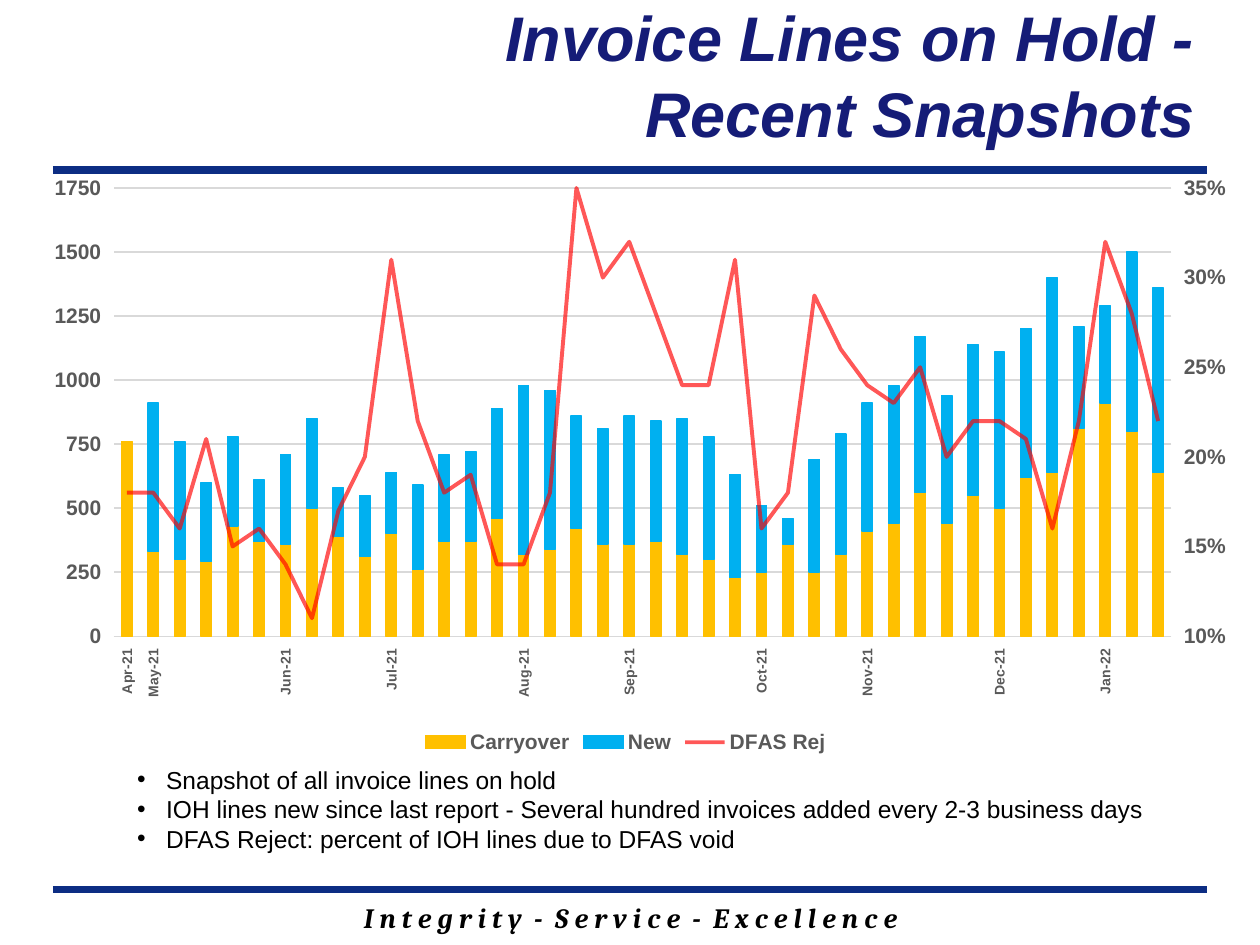
from copy import deepcopy

from lxml import etree
from pptx import Presentation, util as u
from pptx.chart.axis import CategoryAxis, ValueAxis
from pptx.chart.data import CategoryChartData
from pptx.dml.color import RGBColor
from pptx.enum import chart as ch, shapes, text
from pptx.oxml import parse_xml
from pptx.oxml.ns import nsdecls, qn

NAVY, GREY, PALE = "0C2D83", "595959", "D9D9D9"


def rgb(value):
    return RGBColor.from_string(value)


def style(font, size, color, name="Arial", bold=False, italic=False):
    font.size, font.name = u.Pt(size), name
    font.bold, font.italic = bold, italic
    font.color.rgb = rgb(color)


prs = Presentation()
prs.slide_width, prs.slide_height = u.Inches(10), u.Inches(7.5)
s = prs.slides.add_slide(prs.slide_layouts[6])

# Rules above and below the content
for y in (7.06, 1.35):
    rule = s.shapes.add_connector(shapes.MSO_CONNECTOR.STRAIGHT, u.Inches(0.42),
                                  u.Inches(y), u.Inches(9.58), u.Inches(y))
    rule.line.color.rgb = rgb(NAVY)
    rule.line.width = u.Pt(4.5)
    etree.SubElement(rule.element.spPr, qn("a:effectLst"))

# Motto
sp = s.shapes.add_textbox(u.Inches(0.42), u.Inches(7.1), u.Inches(9.17), u.Inches(0.37))
tf = sp.text_frame
tf.word_wrap = True
p = tf.paragraphs[0]
p.alignment = text.PP_ALIGN.CENTER
r = p.add_run()
r.text = "I n t e g r i t y  -  S e r v i c e  -  E x c e l l e n c e"
style(r.font, 16, "000000", "Cambria", True, True)

# Title
sp = s.shapes.add_textbox(u.Inches(3.69), u.Inches(0.16), u.Inches(5.89), u.Inches(1.08))
tf = sp.text_frame
tf.word_wrap = True
tf.vertical_anchor = text.MSO_ANCHOR.BOTTOM
p = tf.paragraphs[0]
p.alignment = text.PP_ALIGN.RIGHT
for i, line in enumerate(("Invoice Lines on Hold -", "Recent Snapshots")):
    if i:
        p.add_line_break()
    r = p.add_run()
    r.text = line
    style(r.font, 36, "151C77", bold=True, italic=True)

# Chart data: a label only on the first snapshot of each month
month_starts = {0: "Apr-21", 1: "May-21", 6: "Jun-21", 10: "Jul-21", 15: "Aug-21",
                19: "Sep-21", 24: "Oct-21", 28: "Nov-21", 33: "Dec-21", 37: "Jan-22"}
carryover = [760, 330, 300, 290, 430, 370, 360, 500, 390, 310,
             400, 260, 370, 370, 460, 320, 340, 420, 360, 360,
             370, 320, 300, 230, 250, 360, 250, 320, 410, 440,
             560, 440, 550, 500, 620, 640, 810, 910, 800, 640]
new = [None, 580, 460, 310, 350, 240, 350, 350, 190, 240,
       240, 330, 340, 350, 430, 660, 620, 440, 450, 500,
       470, 530, 480, 400, 260, 100, 440, 470, 500, 540,
       610, 500, 590, 610, 580, 760, 400, 380, 700, 720]
reject_percent = [18, 18, 16, 21, 15, 16, 14, 11, 17, 20,
                  31, 22, 18, 19, 14, 14, 18, 35, 30, 32,
                  28, 24, 24, 31, 16, 18, 29, 26, 24, 23,
                  25, 20, 22, 22, 21, 16, 22, 32, 28, 22]
data = CategoryChartData()
data.categories = [month_starts.get(i, "") for i in range(len(carryover))]
data.add_series("Carryover", carryover)
data.add_series("New", new)
data.add_series("DFAS Rej", [v / 100 for v in reject_percent], number_format="0%")
chart = s.shapes.add_chart(ch.XL_CHART_TYPE.COLUMN_STACKED, u.Inches(0.14), u.Inches(1.4),
                           u.Inches(9.65), u.Inches(4.62), data).chart
style(chart.font, 12, "000000", bold=True)
chart.has_title = False
chart.has_legend = True
chart.legend.position = ch.XL_LEGEND_POSITION.BOTTOM
chart.legend.include_in_layout = False
style(chart.legend.font, 12, GREY, bold=True)

bars = chart.plots[0]
bars.gap_width, bars.overlap = 150, 100
bars.vary_by_categories = False
for series, color in zip(bars.series, ("FFC000", "00B0F0")):
    series.format.fill.solid()
    series.format.fill.fore_color.rgb = rgb(color)
    series.format.line.color.rgb = rgb(color)
    series.format.line.width = u.Pt(0.75)

# Category and left axes
months, left = chart.category_axis, chart.value_axis
for axis, size in ((months, 8), (left, 12)):
    axis.major_tick_mark = axis.minor_tick_mark = ch.XL_TICK_MARK.NONE
    axis.tick_label_position = ch.XL_TICK_LABEL_POSITION.LOW
    style(axis.tick_labels.font, size, GREY, bold=True)
left.minimum_scale, left.maximum_scale, left.major_unit = 0, 1750, 250
left.format.line.fill.background()
left.has_major_gridlines = True
for line in (left.major_gridlines.format.line, months.format.line):
    line.color.rgb = rgb(PALE)
    line.width = u.Pt(0.75)

cat_ax, val_ax = chart._chartSpace.catAx_lst[0], chart._chartSpace.valAx_lst[0]
cat_ax.find(qn("c:txPr")).find(qn("a:bodyPr")).set("rot", "-5400000")
skip = parse_xml(f'<c:tickLblSkip {nsdecls("c")} val="1"/>')
cat_ax.find(qn("c:noMultiLvlLbl")).addprevious(skip)

# Right axis and its hidden category axis
right_ax, hidden_ax = deepcopy(val_ax), deepcopy(cat_ax)
val_ax.addnext(right_ax)
right_ax.addnext(hidden_ax)
for ax, own, other in ((right_ax, "5002", "5001"), (hidden_ax, "5001", "5002")):
    ax.find(qn("c:axId")).set("val", own)
    ax.find(qn("c:crossAx")).set("val", other)
right_ax.find(qn("c:axPos")).set("val", "r")
right_ax.find(qn("c:crosses")).set("val", "max")
CategoryAxis(hidden_ax).visible = False
right = ValueAxis(right_ax)
right.has_major_gridlines = False
right.minimum_scale, right.maximum_scale, right.major_unit = 0.1, 0.35, 0.05
right.major_tick_mark = ch.XL_TICK_MARK.OUTSIDE
right.tick_label_position = ch.XL_TICK_LABEL_POSITION.NEXT_TO_AXIS
right.tick_labels.number_format = "0%"
right.tick_labels.number_format_is_linked = False

# Reject rate becomes a line on the right axis
bar_chart = chart._chartSpace.find(".//" + qn("c:barChart"))
reject = bar_chart.findall(qn("c:ser"))[2]
for bar_only in reject.findall(qn("c:invertIfNegative")):
    reject.remove(bar_only)
line_chart = parse_xml(
    f'<c:lineChart {nsdecls("c")}><c:grouping val="standard"/><c:varyColors val="0"/>'
    '<c:marker val="1"/><c:axId val="5001"/><c:axId val="5002"/></c:lineChart>')
line_chart.insert(2, reject)
bar_chart.addnext(line_chart)
series = chart.plots[1].series[0]
series.smooth = False
series.marker.style = ch.XL_MARKER_STYLE.NONE
series.format.line.color.rgb = rgb("FF0000")
series.format.line.width = u.Pt(2.25)
red = reject.find(".//" + qn("a:ln")).find(".//" + qn("a:srgbClr"))
etree.SubElement(red, qn("a:alpha")).set("val", "65000")

# Inner plot area
plot_area = bar_chart.getparent()
for old in plot_area.findall(qn("c:layout")):
    plot_area.remove(old)
sizes = "".join(f'<c:{k} val="{v}"/>' for k, v in
                (("x", 0.079), ("y", 0.02), ("w", 0.87), ("h", 0.77)))
plot_area.insert(0, parse_xml(
    f'<c:layout {nsdecls("c")}><c:manualLayout><c:layoutTarget val="inner"/>'
    f'<c:xMode val="edge"/><c:yMode val="edge"/>{sizes}</c:manualLayout></c:layout>'))

# Notes under the chart
sp = s.shapes.add_textbox(u.Inches(0.99), u.Inches(6.02), u.Inches(8.29), u.Inches(0.81))
tf = sp.text_frame
tf.word_wrap = True
bullets = ("Snapshot of all invoice lines on hold",
           "IOH lines new since last report - Several hundred invoices added every 2-3 business days",
           "DFAS Reject: percent of IOH lines due to DFAS void")
for i, bullet in enumerate(bullets):
    p = tf.add_paragraph() if i else tf.paragraphs[0]
    pPr = p._p.get_or_add_pPr()
    pPr.set("marL", str(u.Inches(0.23)))
    pPr.set("indent", str(-u.Inches(0.23)))
    etree.SubElement(pPr, qn("a:buFont")).set("typeface", "Arial")
    etree.SubElement(pPr, qn("a:buChar")).set("char", "•")
    r = p.add_run()
    r.text = bullet
    style(r.font, 14, "000000")

prs.save("out.pptx")
